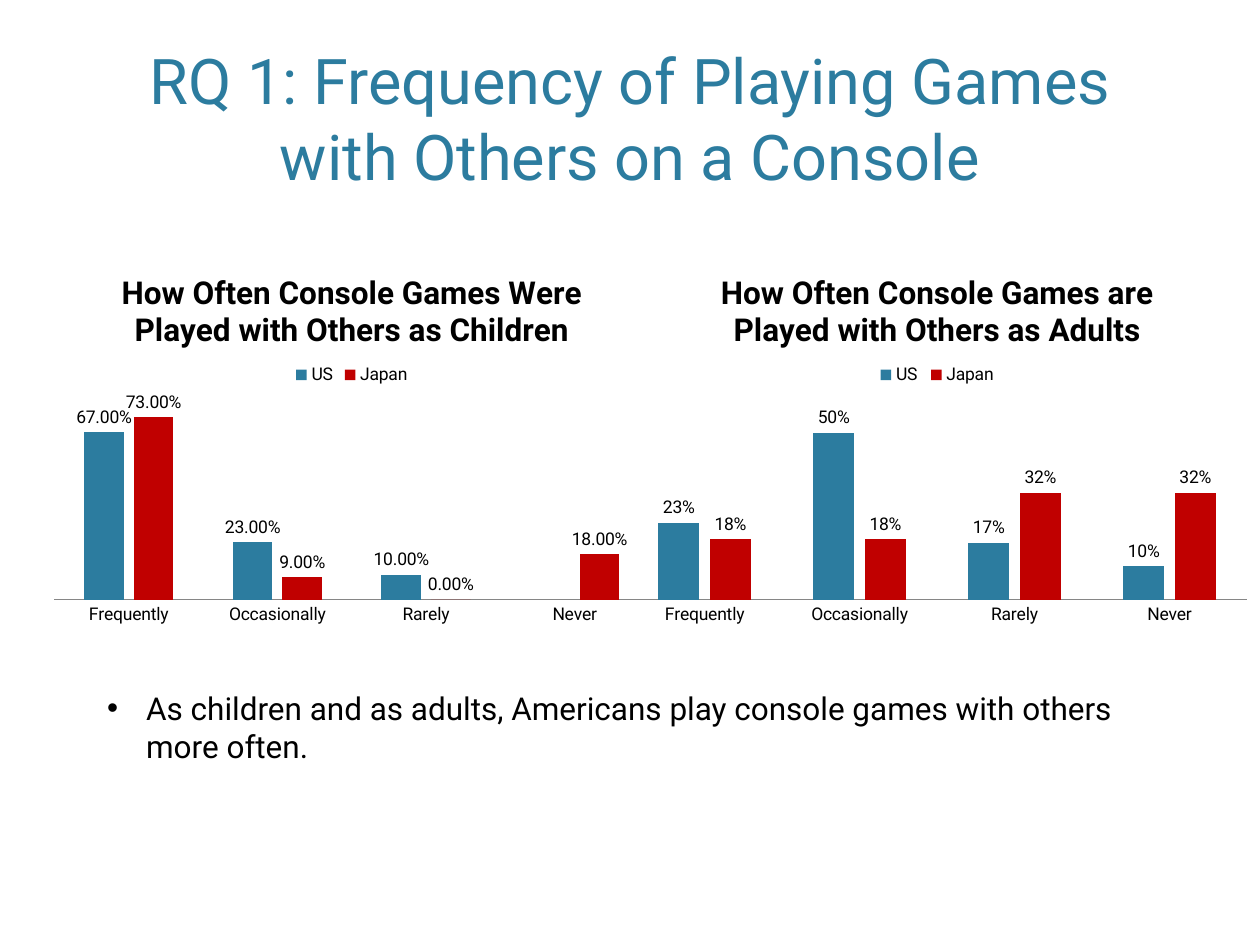
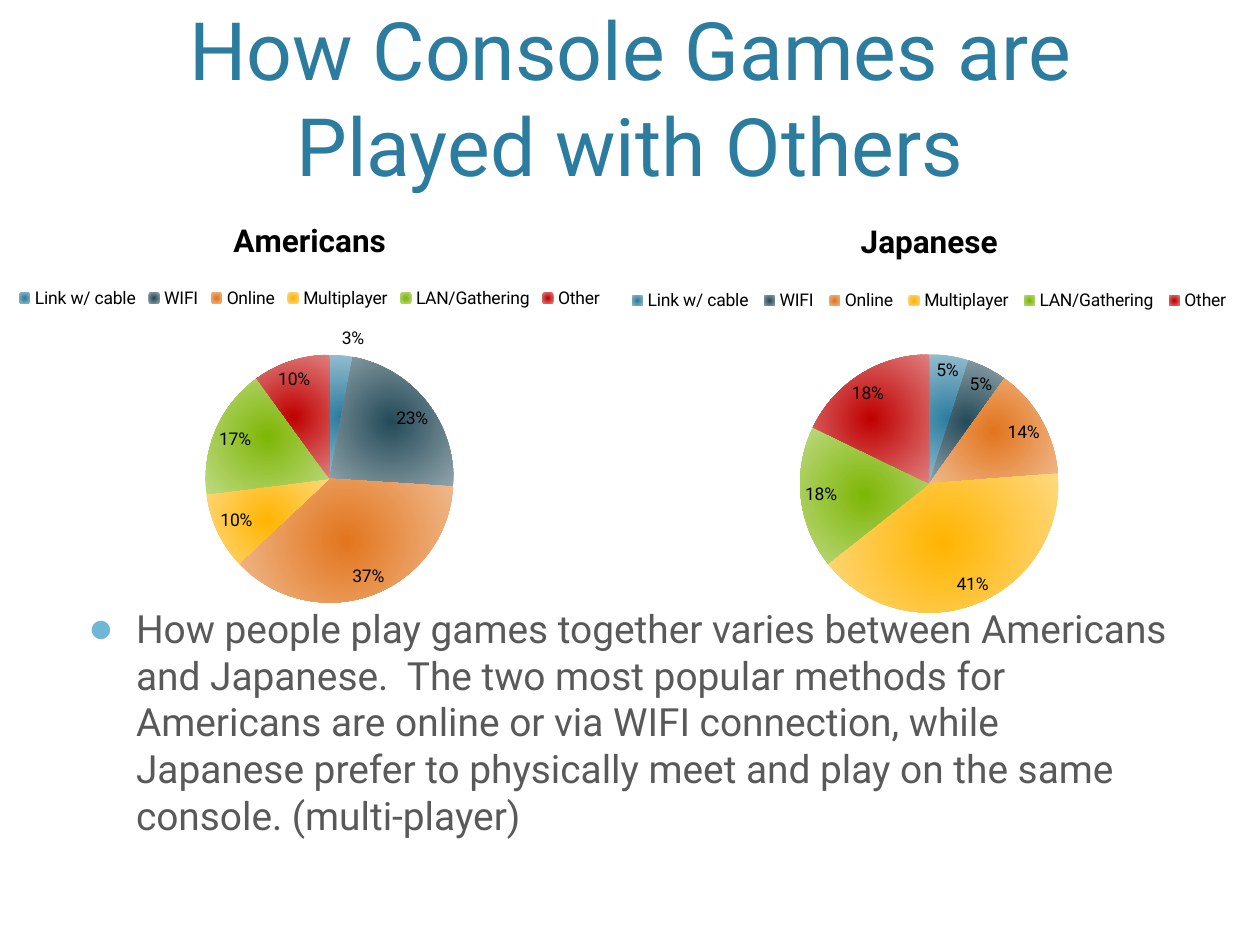
from pptx import Presentation, util as u
from pptx.chart.data import CategoryChartData
from pptx.dml.color import RGBColor
from pptx.enum import chart as ch, text as tx
from pptx.oxml import parse_xml
from pptx.oxml.ns import nsdecls, qn

FONT = "Roboto"
BLUE = RGBColor(0x2C, 0x7C, 0x9F)
SLATE = RGBColor(0x24, 0x4A, 0x58)
ORANGE = RGBColor(0xE2, 0x75, 0x1D)
AMBER = RGBColor(0xFF, 0xB4, 0x00)
GREEN = RGBColor(0x7E, 0xB6, 0x06)
RED = RGBColor(0xC0, 0x00, 0x00)
SKY = RGBColor(0x6F, 0xB7, 0xD7)
GREY = RGBColor(0x59, 0x59, 0x59)
RULE = RGBColor(0x86, 0x86, 0x86)
BLACK = RGBColor(0x00, 0x00, 0x00)

# Grid: 120 columns by 90 rows on a 10 x 7.5 inch slide
WIDE, HIGH = u.Inches(10), u.Inches(7.5)
COL, ROW = WIDE / 120, HIGH / 90
HEAD = (7.2, 1.4, 105.6, 17.6)

# Parts of a chart, as shares of its box: left, top, width, height
BAR_KEY, BAR_PLOT = (0.4, 0.29, 0.2, 0.07), (0.02, 0.39, 0.96, 0.53)
PIE_KEY = (0.05, 0.2, 0.9, 0.07)

OFTEN = ["Frequently", "Occasionally", "Rarely", "Never"]
NATIONS = {"US": BLUE, "Japan": RED}
WAYS = {"Link w/ cable": BLUE, "WIFI": SLATE, "Online": ORANGE,
        "Multiplayer": AMBER, "LAN/Gathering": GREEN, "Other": RED}


def span(box):
    left, top, wide, high = box
    return [round(n) for n in (left * COL, top * ROW, wide * COL, high * ROW)]


def style(font, size, color, bold=False):
    font.name, font.size, font.bold = FONT, u.Pt(size), bold
    font.color.rgb = color


def fill_text(shape, box, words, size, color):
    """Move a placeholder to its box and write one paragraph in it."""
    shape.left, shape.top, shape.width, shape.height = span(box)
    frame = shape.text_frame
    frame.word_wrap = True
    frame.auto_size = tx.MSO_AUTO_SIZE.NONE
    para = frame.paragraphs[0]
    run = para.add_run()
    run.text = words
    style(run.font, size, color)
    return frame, para


def add_title(slide, words, size):
    frame, para = fill_text(slide.shapes.title, HEAD, words, size, BLUE)
    frame.vertical_anchor = tx.MSO_ANCHOR.BOTTOM
    para.alignment = tx.PP_ALIGN.CENTER


def add_point(slide, box, words, size, color, mark, tint, scale, indent,
              before=0):
    """A bulleted statement in the body placeholder."""
    para = fill_text(slide.placeholders[1], box, words, size, color)[1]
    para.space_before = u.Pt(before)
    props = para._p.get_or_add_pPr()
    props.set("marL", str(u.Inches(indent)))
    props.set("indent", str(-u.Inches(indent)))
    for tag in (f'buClr {nsdecls("a")}><a:srgbClr val="{tint}"/></a:buClr',
                f'buSzPct {nsdecls("a")} val="{scale * 1000}"/',
                f'buFont {nsdecls("a")} typeface="Arial"/',
                f'buChar {nsdecls("a")} char="{mark}"/'):
        props.append(parse_xml(f"<a:{tag}>"))


def lay_out(part, after, box, inner=""):
    """Place a chart's legend or plot area by shares of the chart."""
    for old in part.findall(qn("c:layout")):
        part.remove(old)
    sizes = "".join(f'<c:{tag} val="{share}"/>' for tag, share in zip("xywh", box))
    node = parse_xml(
        f'<c:layout {nsdecls("c")}><c:manualLayout>{inner}<c:xMode val="edge"/>'
        f'<c:yMode val="edge"/>{sizes}</c:manualLayout></c:layout>')
    spot = 0 if after is None else part.index(part.find(qn(after))) + 1
    part.insert(spot, node)


def add_chart(slide, kind, box, title, cats, rows, form, key, area):
    """A chart with a bold title, a legend on top and value labels."""
    data = CategoryChartData(number_format=form)
    data.categories = cats
    for name, vals in rows.items():
        data.add_series(name, vals)
    chart = slide.shapes.add_chart(kind, *span(box), data).chart
    style(chart.font, 10, BLACK)
    chart.has_title = True
    run = chart.chart_title.text_frame.paragraphs[0].add_run()
    run.text = title
    style(run.font, 18, BLACK, True)
    chart.chart_title.include_in_layout = False
    chart.has_legend = True
    chart.legend.position = ch.XL_LEGEND_POSITION.TOP
    chart.legend.include_in_layout = False
    style(chart.legend.font, 10, BLACK)
    lay_out(chart.legend._element, "c:legendPos", key)
    lay_out(chart._chartSpace.chart.plotArea, None, area,
            '<c:layoutTarget val="inner"/>')
    plot = chart.plots[0]
    plot.has_data_labels = True
    labels = plot.data_labels
    labels.number_format, labels.number_format_is_linked = form, False
    style(labels.font, 10, BLACK)
    return chart, plot, labels


def add_bars(slide, box, title, rows, form):
    chart, plot, labels = add_chart(
        slide, ch.XL_CHART_TYPE.COLUMN_CLUSTERED, box, title, OFTEN, rows, form,
        BAR_KEY, BAR_PLOT)
    labels.show_value = True
    labels.position = ch.XL_LABEL_POSITION.OUTSIDE_END
    plot.gap_width, plot.overlap = 150, -25
    plot.vary_by_categories = False
    for bars in plot.series:
        bars.format.fill.solid()
        bars.format.fill.fore_color.rgb = NATIONS[bars.name]
    # Only the category line shows
    chart.value_axis.visible = False
    chart.value_axis.has_major_gridlines = False
    axis = chart.category_axis
    axis.major_tick_mark = ch.XL_TICK_MARK.NONE
    axis.format.line.color.rgb = RULE
    axis.format.line.width = u.Pt(1)
    style(axis.tick_labels.font, 10, BLACK)


def glow(point, color):
    """Fill a slice from its colour at the centre to a pale edge."""
    pale = RGBColor(*((part + 255) // 2 for part in color))
    point.format.fill.solid()
    props = point.format.fill._xPr
    props.replace(props.find(qn("a:solidFill")), parse_xml(
        f'<a:gradFill {nsdecls("a")} rotWithShape="1"><a:gsLst>'
        f'<a:gs pos="0"><a:srgbClr val="{color}"/></a:gs>'
        f'<a:gs pos="100000"><a:srgbClr val="{pale}"/></a:gs></a:gsLst>'
        '<a:path path="circle"><a:fillToRect l="50000" t="50000" '
        'r="50000" b="50000"/></a:path></a:gradFill>'))


def add_pie(slide, box, title, vals, area):
    chart, plot, labels = add_chart(
        slide, ch.XL_CHART_TYPE.PIE, box, title, list(WAYS),
        {"Series 1": vals}, "0%", PIE_KEY, area)
    labels.show_percentage, labels.show_value = True, False
    labels.position = ch.XL_LABEL_POSITION.BEST_FIT
    plot.vary_by_categories = True
    for spot, color in enumerate(WAYS.values()):
        glow(plot.series[0].points[spot], color)


def often_slide(deck):
    slide = deck.slides.add_slide(deck.slide_layouts[1])
    add_title(slide, "RQ 1: Frequency of Playing Games with Others on a Console", 36)
    add_bars(slide, (4, 24, 59, 36),
             "How Often Console Games Were Played with Others as Children",
             {"US": (0.67, 0.23, 0.1, None), "Japan": (0.73, 0.09, 0, 0.18)}, "0.00%")
    add_bars(slide, (58.5, 24, 61.5, 36),
             "How Often Console Games are Played with Others as Adults",
             {"US": (0.23, 0.5, 0.17, 0.1), "Japan": (0.18, 0.18, 0.32, 0.32)}, "0%")
    add_point(slide, (9, 65, 105, 8.5),
              "As children and as adults, Americans play console games "
              "with others more often.", 18, BLACK, "•", BLACK, 100, 0.31)


def ways_slide(deck):
    slide = deck.slides.add_slide(deck.slide_layouts[1])
    add_title(slide, "How Console Games are Played with Others", 46)
    add_point(slide, (7.2, 57, 105.6, 21),
              "How people play games together varies between Americans and "
              "Japanese.  The two most popular methods for Americans are online "
              "or via WIFI connection, while Japanese prefer to physically meet "
              "and play on the same console. (multi-player)",
              22.2, GREY, "●", SKY, 110, 0.38, before=20)
    add_pie(slide, (-2, 19, 63, 40), "Americans",
            (3, 23, 37, 10, 17, 10), (0.34, 0.37, 0.38, 0.59))
    add_pie(slide, (56, 19, 65, 41), "Japanese",
            (5, 5, 14, 41, 18, 18), (0.31, 0.36, 0.38, 0.6))


def main():
    deck = Presentation()
    deck.slide_width, deck.slide_height = WIDE, HIGH
    often_slide(deck)
    ways_slide(deck)
    deck.save("out.pptx")


if __name__ == "__main__":
    main()
